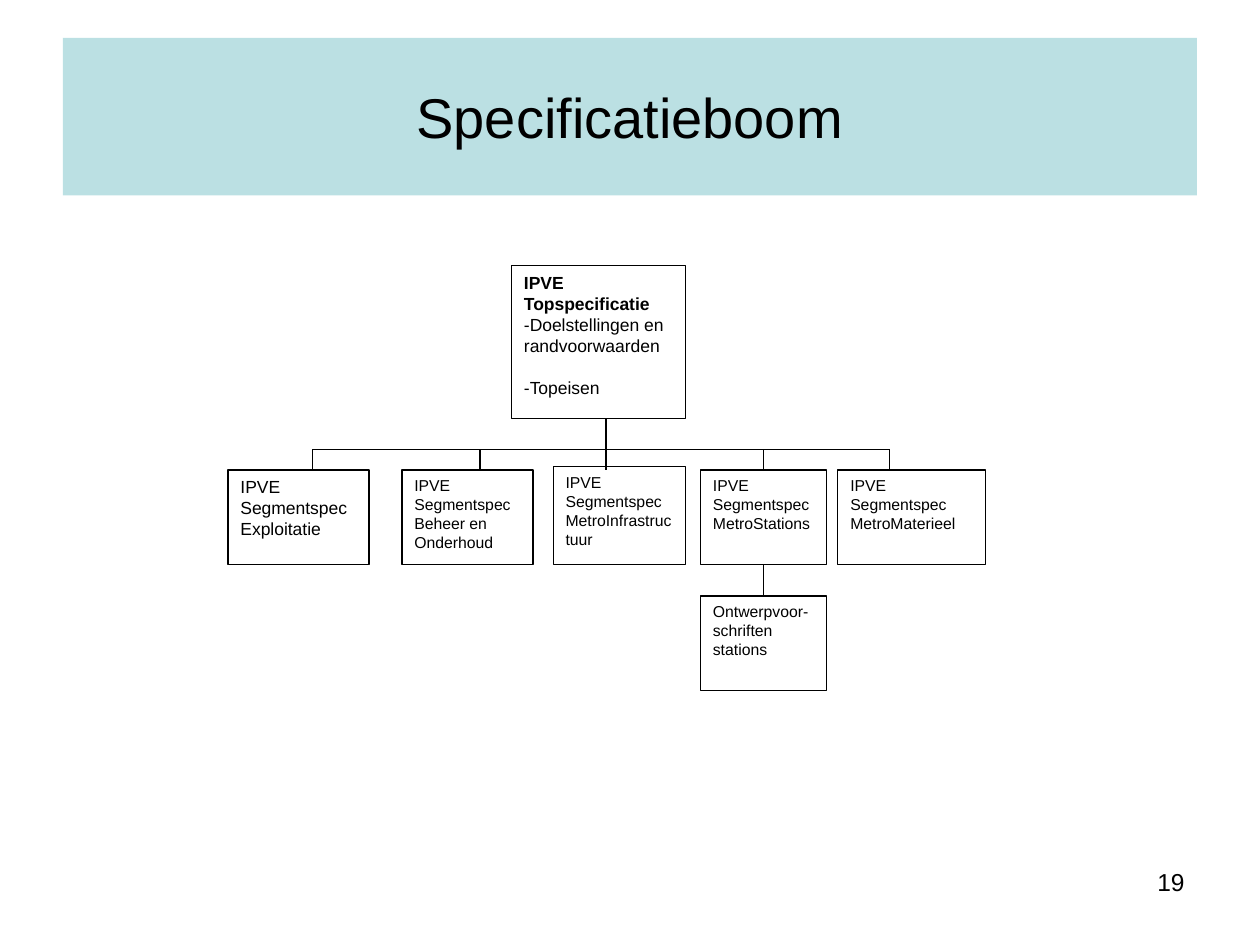
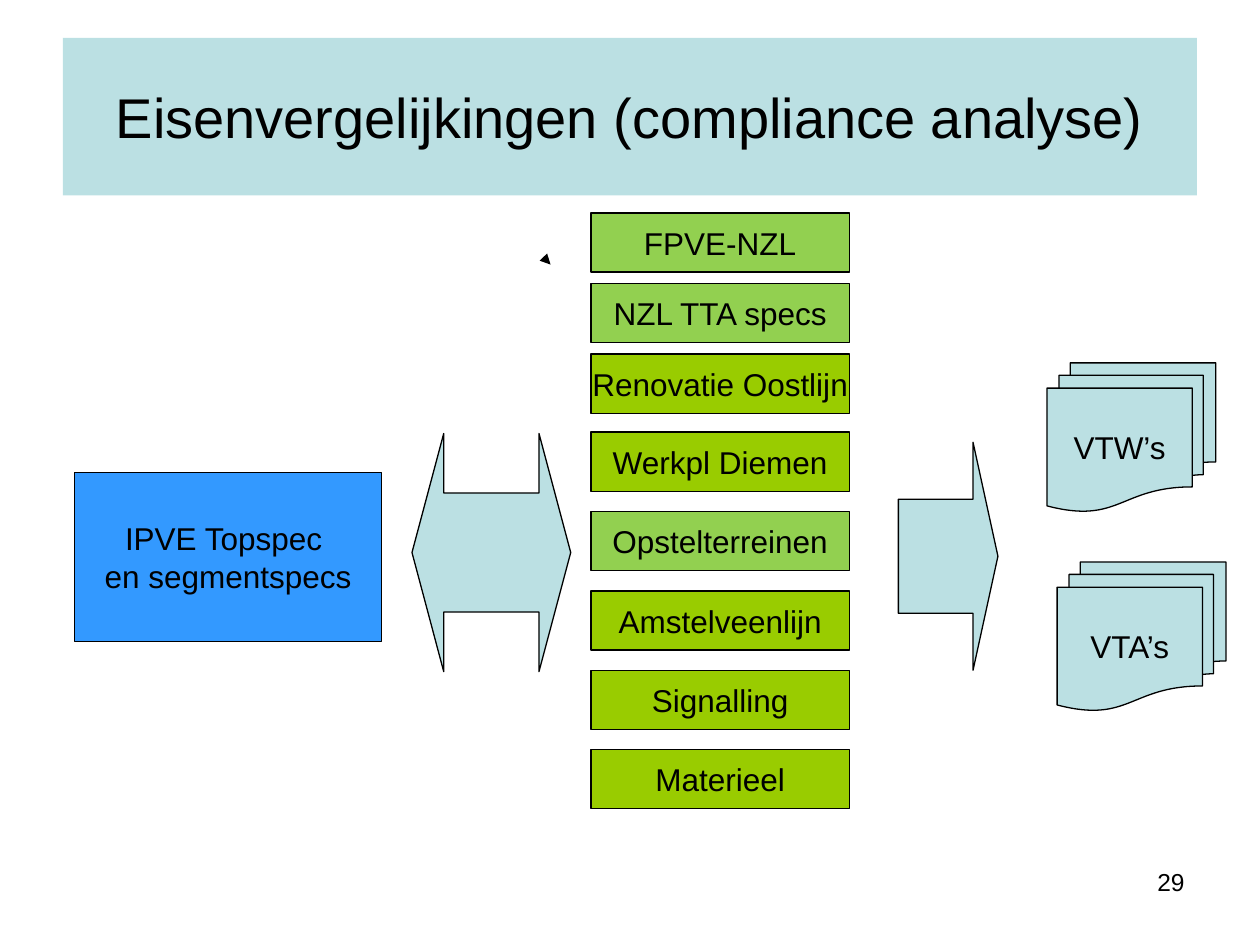
from dataclasses import dataclass
from typing import Any, NamedTuple, Optional

from lxml.etree import SubElement
from pptx import Presentation
from pptx.dml.color import RGBColor
from pptx.enum.shapes import MSO_CONNECTOR, MSO_SHAPE
from pptx.enum.text import MSO_ANCHOR, PP_ALIGN
from pptx.oxml.ns import qn
from pptx.util import Inches, Pt


@dataclass(frozen=True)
class Theme:
    font: str = "Arial"
    ink: RGBColor = RGBColor(0x00, 0x00, 0x00)
    paper: RGBColor = RGBColor(0xFF, 0xFF, 0xFF)
    band: RGBColor = RGBColor(0xBB, 0xE0, 0xE3)
    specification: RGBColor = RGBColor(0x33, 0x99, 0xFF)
    light_green: RGBColor = RGBColor(0x92, 0xD0, 0x50)
    green: RGBColor = RGBColor(0x99, 0xCC, 0x00)
    title_size: int = 32
    label_size: int = 18
    number_size: int = 14
    top_size: int = 10
    segment_size: int = 9
    line_width: float = 0.75


THEME = Theme()


class Area(NamedTuple):
    left: float
    top: float
    width: float
    height: float


class Entry(NamedTuple):
    text: str
    bold: bool = False
    space_before: float = 0


class Node(NamedTuple):
    name: str
    area: Area
    entries: list[Entry]
    size: int = THEME.segment_size
    fill: Optional[RGBColor] = THEME.paper


class Branch(NamedTuple):
    start: tuple[float, float]
    end: tuple[float, float]
    parent: Optional[str] = None
    child: Optional[str] = None


class Block(NamedTuple):
    kind: MSO_SHAPE
    area: Area
    fill: RGBColor
    lines: tuple[str, ...] = ()
    adjustments: tuple[float, ...] = ()


class Requirement(NamedTuple):
    text: str
    fill: RGBColor


TITLE_AREA = Area(0.5, 0.3, 9, 1.25)
NUMBER_AREA = Area(7.17, 6.83, 2.33, 0.52)
CENTRED = {"vertical_anchor": MSO_ANCHOR.MIDDLE, "word_wrap": False}
CENTRED_WRAPPED = {"vertical_anchor": MSO_ANCHOR.MIDDLE, "word_wrap": True}
TOP_WRAPPED = {"vertical_anchor": MSO_ANCHOR.TOP, "word_wrap": True}

SEGMENT_TOP = 3.73
SEGMENT_HEIGHT = 0.75
BUS_TOP = 3.57
STATIONS_CENTRE = 6.06
BUS_LEFT, BUS_RIGHT = 2.48, 7.06

NODES = [
    Node("top", Area(4.06, 2.11, 1.38, 1.21), [
        Entry("IPVE Topspecificatie", bold=True),
        Entry("-Doelstellingen en randvoorwaarden"),
        Entry("-Topeisen", space_before=12),
    ], THEME.top_size, None),
    Node("exploitation", Area(1.81, SEGMENT_TOP, 1.12, SEGMENT_HEIGHT),
         [Entry("IPVE Segmentspec Exploitatie")], THEME.top_size),
    Node("maintenance", Area(3.19, SEGMENT_TOP, 1.04, SEGMENT_HEIGHT),
         [Entry("IPVE Segmentspec"), Entry("Beheer en Onderhoud")]),
    Node("infrastructure", Area(4.39, 3.7, 1.05, 0.78),
         [Entry("IPVE Segmentspec"), Entry("MetroInfrastructuur")], fill=None),
    Node("stations", Area(5.56, SEGMENT_TOP, 1, SEGMENT_HEIGHT),
         [Entry("IPVE Segmentspec"), Entry("MetroStations")]),
    Node("rolling stock", Area(6.65, SEGMENT_TOP, 1.17, SEGMENT_HEIGHT),
         [Entry("IPVE Segmentspec"), Entry("MetroMaterieel")], fill=None),
    Node("station design", Area(5.56, 4.73, 1, SEGMENT_HEIGHT),
         [Entry("Ontwerpvoor-schriften stations")]),
]

BRANCHES = [
    Branch((BUS_RIGHT, BUS_TOP), (BUS_LEFT, BUS_TOP)),
    *(Branch((x, BUS_TOP), (x, SEGMENT_TOP)) for x in (BUS_LEFT, 3.81, BUS_RIGHT)),
    Branch((STATIONS_CENTRE, BUS_TOP), (STATIONS_CENTRE, SEGMENT_TOP), child="stations"),
    Branch((4.81, 3.32), (4.81, SEGMENT_TOP)),
    Branch((STATIONS_CENTRE, 4.48), (STATIONS_CENTRE, 4.73), "stations", "station design"),
]

REQUIREMENT_STACKS = [
    (1.69, 0.56, [
        Requirement("FPVE-NZL", THEME.light_green),
        Requirement("NZL TTA specs", THEME.light_green),
        Requirement("Renovatie Oostlijn", THEME.green),
    ]),
    (3.43, 0.63, [
        Requirement("Werkpl Diemen", THEME.green),
        Requirement("Opstelterreinen", THEME.light_green),
        Requirement("Amstelveenlijn", THEME.green),
        Requirement("Signalling", THEME.green),
        Requirement("Materieel", THEME.green),
    ]),
]

BLOCKS = [
    Block(MSO_SHAPE.RECTANGLE, Area(0.59, 3.75, 2.44, 1.34), THEME.specification,
          ("IPVE Topspec ", "en segmentspecs")),
    *(Block(MSO_SHAPE.RECTANGLE, Area(4.69, top + step * row, 2.05, 0.47),
            requirement.fill, (requirement.text,))
      for top, step, requirements in REQUIREMENT_STACKS
      for row, requirement in enumerate(requirements)),
    Block(MSO_SHAPE.LEFT_RIGHT_ARROW, Area(3.27, 3.44, 1.26, 1.89), THEME.band,
          adjustments=(0.5, 0.2)),
    Block(MSO_SHAPE.RIGHT_ARROW, Area(7.13, 3.51, 0.79, 1.81), THEME.band,
          adjustments=(0.5, 0.25)),
    Block(MSO_SHAPE.FLOWCHART_MULTIDOCUMENT, Area(8.31, 2.88, 1.34, 1.18), THEME.band,
          ("VTW’s",)),
    Block(MSO_SHAPE.FLOWCHART_MULTIDOCUMENT, Area(8.39, 4.46, 1.34, 1.18), THEME.band,
          ("VTA’s",)),
]


def apply_format(target: Any, values: dict[str, Any]) -> None:
    for name, value in values.items():
        setattr(target, name, value)


def write_text(shape: Any, entries: list[Entry], size: int,
               alignment: PP_ALIGN, frame_format: dict[str, Any]) -> None:
    frame = shape.text_frame
    apply_format(frame, frame_format)
    for index, entry in enumerate(entries):
        paragraph = frame.add_paragraph() if index else frame.paragraphs[0]
        apply_format(paragraph, {"alignment": alignment,
                                 "space_before": Pt(entry.space_before)})
        run = paragraph.add_run()
        run.text = entry.text
        apply_format(run.font, {"name": THEME.font, "size": Pt(size), "bold": entry.bold})
        run.font.color.rgb = THEME.ink


def style_line(line: Any) -> None:
    line.color.rgb = THEME.ink
    line.width = Pt(THEME.line_width)


def draw_shape(slide: Any, kind: MSO_SHAPE, area: Area,
               fill: Optional[RGBColor], outlined: bool = True) -> Any:
    shape = slide.shapes.add_shape(kind, *map(Inches, area))
    shape.shadow.inherit = False
    if fill is None:
        shape.fill.background()
    else:
        shape.fill.solid()
        shape.fill.fore_color.rgb = fill
    if outlined:
        style_line(shape.line)
    else:
        shape.line.fill.background()
    return shape


def draw_connector(slide: Any, start: tuple[float, float], end: tuple[float, float],
                   arrow: bool = False) -> Any:
    connector = slide.shapes.add_connector(
        MSO_CONNECTOR.STRAIGHT, *map(Inches, (*start, *end)))
    style_line(connector.line)
    properties = connector.element.spPr
    if arrow:
        SubElement(properties.find(qn("a:ln")), qn("a:tailEnd"), type="triangle")
    SubElement(properties, qn("a:effectLst"))
    return connector


def add_titled_slide(presentation: Any, title: str, number: int) -> Any:
    slide = presentation.slides.add_slide(presentation.slide_layouts[6])
    number_box = slide.shapes.add_textbox(*map(Inches, NUMBER_AREA))
    write_text(number_box, [Entry(str(number))], THEME.number_size,
               PP_ALIGN.RIGHT, TOP_WRAPPED)
    band = draw_shape(slide, MSO_SHAPE.RECTANGLE, TITLE_AREA, THEME.band, outlined=False)
    write_text(band, [Entry(title)], THEME.title_size, PP_ALIGN.CENTER, CENTRED_WRAPPED)
    return slide


def build_specification_tree(presentation: Any) -> None:
    slide = add_titled_slide(presentation, "Specificatieboom", 19)
    boxes: dict[str, Any] = {}
    for node in NODES:
        box = draw_shape(slide, MSO_SHAPE.RECTANGLE, node.area, node.fill)
        write_text(box, node.entries, node.size, PP_ALIGN.LEFT, TOP_WRAPPED)
        boxes[node.name] = box
    for branch in BRANCHES:
        connector = draw_connector(slide, branch.start, branch.end)
        if branch.parent:
            connector.begin_connect(boxes[branch.parent], 2)
        if branch.child:
            connector.end_connect(boxes[branch.child], 0)


def build_compliance_analysis(presentation: Any) -> None:
    slide = add_titled_slide(presentation, "Eisenvergelijkingen (compliance analyse)", 29)
    for block in BLOCKS:
        shape = draw_shape(slide, block.kind, block.area, block.fill)
        for index, value in enumerate(block.adjustments):
            shape.adjustments[index] = value
        if block.lines:
            write_text(shape, [Entry(line) for line in block.lines],
                       THEME.label_size, PP_ALIGN.CENTER, CENTRED)
    draw_connector(slide, (4.36, 2.09), (4.37, 2.1), arrow=True)


def main() -> None:
    presentation = Presentation()
    apply_format(presentation, {"slide_width": Inches(10), "slide_height": Inches(7.5)})
    build_specification_tree(presentation)
    build_compliance_analysis(presentation)
    presentation.save("out.pptx")


if __name__ == "__main__":
    main()
